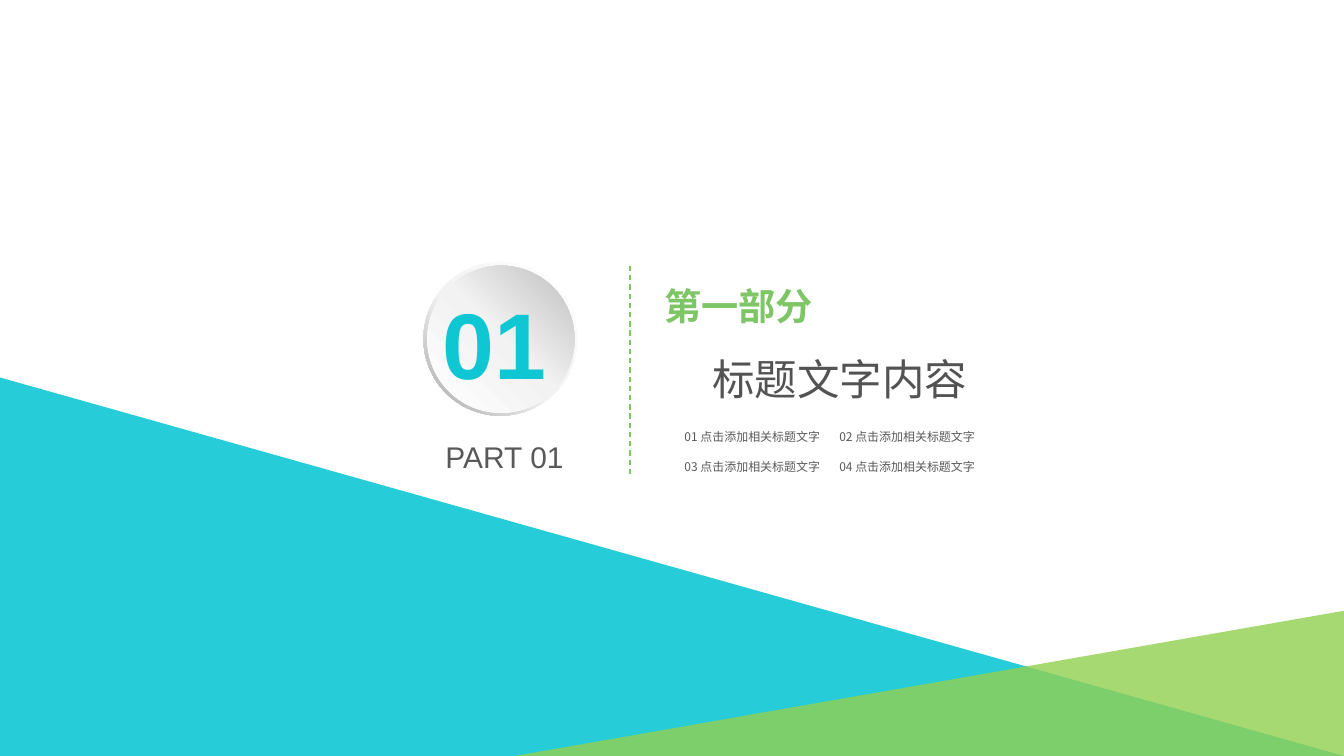
from dataclasses import dataclass

from lxml import etree
from pptx import Presentation
from pptx.dml.color import RGBColor
from pptx.enum.dml import MSO_LINE
from pptx.enum.shapes import MSO_CONNECTOR, MSO_SHAPE
from pptx.enum.text import MSO_ANCHOR, MSO_AUTO_SIZE, PP_ALIGN
from pptx.oxml.ns import qn
from pptx.util import Inches, Pt

STRAIGHT = MSO_CONNECTOR.STRAIGHT
DONUT, OVAL = MSO_SHAPE.DONUT, MSO_SHAPE.OVAL
DASH = MSO_LINE.DASH
TOP, MIDDLE = MSO_ANCHOR.TOP, MSO_ANCHOR.MIDDLE
LEFT = PP_ALIGN.LEFT
NO_AUTOFIT = MSO_AUTO_SIZE.NONE

WIDTH, HEIGHT = 14.06, 7.91


@dataclass(frozen=True)
class Theme:
    latin: str = "Arial"
    chinese: str = "Noto Sans CJK SC"
    cyan: str = "0FC7D3"
    lime: str = "92D050"
    green: str = "7EC565"
    title_gray: str = "535353"
    gray: str = "595959"
    rim: tuple = ((0, "FFFFFF"), (55, "F2F2F2"), (100, "A6A6A6"))
    disc: tuple = ((0, "FFFFFF"), (51, "F2F2F2"), (100, "BFBFBF"))
    number_size: float = 70.3
    title_size: float = 32
    label_size: float = 28
    part_size: float = 22.5
    item_size: float = 9


THEME = Theme()


def write_text(box, text, font, size, color, bold=False, anchor=TOP, inset=(0, 0)):
    """Put one left-aligned, formatted line into a text box or placeholder."""
    frame = box.text_frame
    frame.word_wrap = True
    frame.auto_size = NO_AUTOFIT
    frame.vertical_anchor = anchor
    frame.margin_left = frame.margin_right = Inches(inset[0])
    frame.margin_top = frame.margin_bottom = Inches(inset[1])
    frame.text = text
    para = frame.paragraphs[0]
    para.alignment = LEFT
    span = para.runs[0]
    span.font.name = font
    span.font.size = Pt(size)
    span.font.bold = bold
    span.font.color.rgb = RGBColor.from_string(color)
    # East Asian typeface follows the Latin one
    latin = span.font._element.find(qn("a:latin"))
    east_asian = etree.Element(qn("a:ea"), typeface=font)
    latin.addnext(east_asian)


def add_text(page, left, top, width, height, text, font, size, color, **style):
    box = page.shapes.add_textbox(
        Inches(left), Inches(top), Inches(width), Inches(height))
    write_text(box, text, font, size, color, **style)


def add_triangle(page, corners, color, opacity):
    points = [(Inches(x), Inches(y)) for x, y in corners]
    builder = page.shapes.build_freeform(*points[0], scale=1.0)
    builder.add_line_segments(points[1:], close=True)
    triangle = builder.convert_to_shape()
    triangle.shadow.inherit = False
    triangle.line.fill.background()
    triangle.fill.solid()
    triangle.fill.fore_color.rgb = RGBColor.from_string(color)
    color_node = triangle._element.spPr.find(
        f"{qn('a:solidFill')}/{qn('a:srgbClr')}")
    etree.SubElement(color_node, qn("a:alpha"), val=str(opacity * 1000))


def add_gradient_circle(group, kind, left, top, size, stops, angle):
    circle = group.shapes.add_shape(
        kind, Inches(left), Inches(top), Inches(size), Inches(size))
    circle.shadow.inherit = False
    circle.line.fill.background()
    circle.fill.gradient()
    circle.fill.gradient_angle = angle
    stop_list = circle._element.spPr.find(
        f"{qn('a:gradFill')}/{qn('a:gsLst')}")
    for old_stop in list(stop_list):
        stop_list.remove(old_stop)
    for position, color in stops:
        stop = etree.SubElement(stop_list, qn("a:gs"), pos=str(position * 1000))
        etree.SubElement(stop, qn("a:srgbClr"), val=color)
    return circle


def add_badge(page):
    badge = page.shapes.add_group_shape()
    rim = add_gradient_circle(badge, DONUT, 4.43, 2.74, 1.61, THEME.rim, 225)
    rim.adjustments[0] = 0.05
    add_gradient_circle(badge, OVAL, 4.47, 2.78, 1.54, THEME.disc, 45)


def add_divider(page, x, top, bottom):
    divider = page.shapes.add_connector(
        STRAIGHT, Inches(x), Inches(bottom), Inches(x), Inches(top))
    divider.line.color.rgb = RGBColor.from_string(THEME.green)
    divider.line.width = Pt(1)
    divider.line.dash_style = DASH
    etree.SubElement(divider._element.spPr, qn("a:effectLst"))


def add_items(page):
    """Four numbered items in a two-by-two grid."""
    for index in range(4):
        row, column = divmod(index, 2)
        add_text(page, 7.07 + 1.62 * column, 4.45 + 0.31 * row, 1.71, 0.25,
                 f"{index + 1:02d} 点击添加相关标题文字", THEME.chinese,
                 THEME.item_size, THEME.gray, inset=(0.09, 0.05))


def set_title(page):
    title = page.shapes.title
    title.left, title.top = Inches(7.45), Inches(3.61)
    title.width, title.height = Inches(2.9), Inches(0.7)
    write_text(title, "标题文字内容", THEME.chinese, THEME.title_size,
               THEME.title_gray, anchor=MIDDLE)


def main():
    deck = Presentation()
    deck.slide_width, deck.slide_height = Inches(WIDTH), Inches(HEIGHT)
    page = deck.slides.add_slide(deck.slide_layouts.get_by_name("Title Only"))

    # Background triangles
    add_triangle(page, [(0, 3.95), (WIDTH, HEIGHT), (0, HEIGHT)], THEME.cyan, 90)
    add_triangle(page, [(WIDTH, 6.39), (5.38, HEIGHT), (WIDTH, HEIGHT)],
                 THEME.lime, 80)

    # Section number
    add_badge(page)
    add_text(page, 4.63, 2.99, 1.39, 1.18, "01", THEME.latin,
             THEME.number_size, THEME.cyan, bold=True)
    add_text(page, 4.66, 4.59, 1.39, 0.38, "PART 01", THEME.latin,
             THEME.part_size, THEME.gray)
    add_divider(page, 6.59, 2.78, 4.96)

    # Section heading and contents
    add_text(page, 6.95, 2.9, 1.8, 0.6, "第一部分", THEME.chinese,
             THEME.label_size, THEME.green, bold=True, anchor=MIDDLE)
    set_title(page)
    add_items(page)

    deck.save("out.pptx")


if __name__ == "__main__":
    main()
